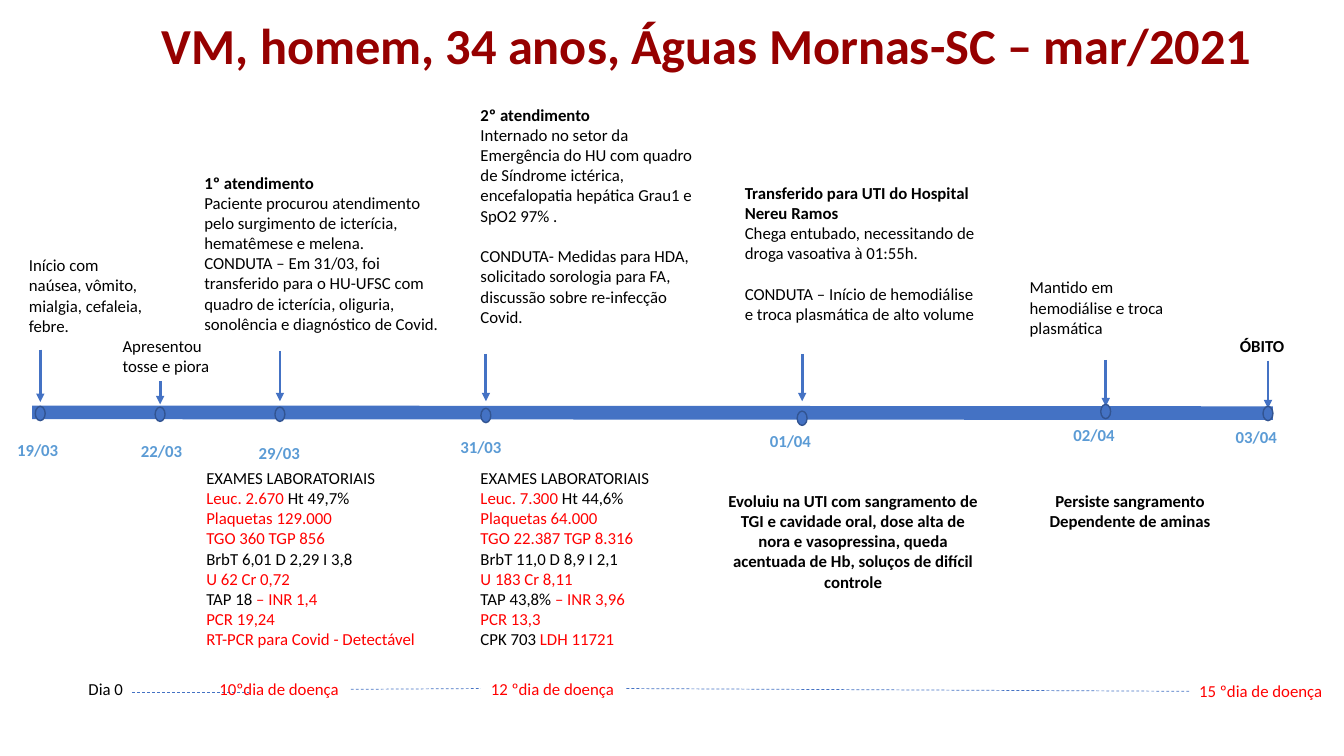
from lxml.etree import SubElement
from pptx import Presentation
from pptx.dml.color import RGBColor
from pptx.enum.dml import MSO_LINE
from pptx.enum.shapes import MSO_CONNECTOR, MSO_SHAPE
from pptx.enum.text import MSO_ANCHOR, MSO_AUTO_SIZE, PP_ALIGN
from pptx.oxml.ns import qn
from pptx.util import Cm, Pt

BLACK = RGBColor(0x00, 0x00, 0x00)
RED = RGBColor(0xFF, 0x00, 0x00)
DARK_RED = RGBColor(0x96, 0x00, 0x00)
BLUE = RGBColor(0x44, 0x72, 0xC4)
DARK_BLUE = RGBColor(0x32, 0x54, 0x91)
DATE_BLUE = RGBColor(0x5B, 0x9B, 0xD5)

DOT_WIDTH, DOT_HEIGHT = 0.25, 0.36
BLANK_LINE = Pt(14.6)

# date, label left and top, dot left and top, arrow top and bottom
EVENTS = [
    ("19/03", 0.18, 10.95, 0.89, 10.24, 8.81, 10.13),
    ("22/03", 3.30, 10.97, 3.91, 10.26, 9.60, 10.19),
    ("29/03", 6.27, 11.02, 6.93, 10.26, 8.84, 10.11),
    ("31/03", 11.35, 10.87, 12.12, 10.29, 8.92, 10.11),
    ("01/04", 19.15, 10.74, 20.09, 10.36, 8.92, 10.11),
    ("02/04", 26.80, 10.59, 27.74, 10.19, 9.07, 10.24),
    ("03/04", 30.89, 10.64, 31.83, 10.24, 9.09, 10.29),
]

# (left, top, width, height), heading, paragraphs, whether a gap precedes the last one
NOTES = [
    ((0.48, 6.30, 3.45, 2.31), None,
     ["Início com naúsea, vômito, mialgia, cefaleia, febre."], False),
    ((2.84, 8.33, 2.82, 1.27), None, ["Apresentou tosse e piora"], False),
    ((4.90, 4.22, 6.76, 4.37), "1º atendimento",
     ["Paciente procurou atendimento pelo surgimento de icterícia, hematêmese e melena.",
      "CONDUTA – Em 31/03, foi transferido para o HU-UFSC com quadro de icterícia, "
      "oliguria, sonolência e diagnóstico de Covid."], False),
    ((11.86, 2.51, 6.32, 5.89), "2º atendimento",
     ["Internado no setor da Emergência do HU com quadro de Síndrome ictérica, "
      "encefalopatia hepática Grau1 e SpO2 97% .",
      "CONDUTA- Medidas para HDA, solicitado sorologia para FA, discussão sobre "
      "re-infecção Covid."], True),
    ((18.52, 4.47, 6.53, 3.84), "Transferido para UTI do Hospital Nereu Ramos",
     ["Chega entubado, necessitando de droga vasoativa à 01:55h.",
      "CONDUTA – Início de hemodiálise e troca plasmática de alto volume"], True),
    ((25.70, 6.86, 4.09, 1.80), None,
     ["Mantido em hemodiálise e troca plasmática"], False),
]

OUTCOMES = [
    ((18.06, 12.24, 6.88, 2.82),
     ["Evoluiu na UTI com sangramento de TGI e cavidade oral, dose alta de nora e "
      "vasopressina, queda acentuada de Hb, soluços de difícil controle"]),
    ((25.04, 12.24, 6.88, 1.27), ["Persiste sangramento", "Dependente de aminas"]),
    ((30.28, 8.33, 3.05, 0.76), ["ÓBITO"]),
]

# each paragraph is a list of (text, colour) runs
EXAMS = [
    ((4.95, 11.66, 5.87, 4.88), [
        [("EXAMES LABORATORIAIS", BLACK)],
        [("Leuc. 2.670 ", RED), ("Ht 49,7%", BLACK)],
        [("Plaquetas 129.000", RED)],
        [("TGO 360 TGP 856", RED)],
        [("BrbT 6,01 D 2,29 I 3,8", BLACK)],
        [("U 62 Cr 0,72", RED)],
        [("TAP 18 ", BLACK), ("– INR 1,4", RED)],
        [("PCR 19,24", RED)],
        [("RT-PCR para Covid - Detectável", RED)],
    ]),
    ((11.86, 11.66, 4.83, 4.88), [
        [("EXAMES LABORATORIAIS", BLACK)],
        [("Leuc. 7.300 ", RED), ("Ht 44,6%", BLACK)],
        [("Plaquetas 64.000", RED)],
        [("TGO 22.387 TGP 8.316", RED)],
        [("BrbT 11,0 D 8,9 I 2,1", BLACK)],
        [("U 183 Cr 8,11", RED)],
        [("TAP 43,8% ", BLACK), ("– INR 3,96", RED)],
        [("PCR 13,3", RED)],
        [("CPK 703 ", BLACK), ("LDH 11721", RED)],
    ]),
]

ILLNESS_DAYS = [
    ((1.98, 16.99, 1.40, 0.76), "Dia 0", BLACK),
    ((5.28, 16.99, 3.56, 0.76), "10ºdia de doença", RED),
    ((12.12, 16.97, 3.66, 0.76), "12 ºdia de doença", RED),
    ((29.97, 17.02, 3.66, 0.76), "15 ºdia de doença", RED),
]
DAY_LINKS = [
    (3.33, 17.45, 6.27, 17.45),
    (8.84, 17.37, 12.12, 17.35),
    (29.97, 17.42, 15.77, 17.35),
]


def add_text(slide, place, paragraphs, wrap=True, align=PP_ALIGN.LEFT, size=12):
    """Each paragraph is a list of (text, colour, bold) runs."""
    box = slide.shapes.add_textbox(*map(Cm, place))
    frame = box.text_frame
    frame.word_wrap = wrap
    frame.auto_size = MSO_AUTO_SIZE.SHAPE_TO_FIT_TEXT
    for number, runs in enumerate(paragraphs):
        paragraph = frame.add_paragraph() if number else frame.paragraphs[0]
        paragraph.alignment = align
        for text, colour, bold in runs:
            run = paragraph.add_run()
            run.text = text
            formats = {"name": "Calibri", "size": Pt(size), "bold": bold}
            for attribute, value in formats.items():
                setattr(run.font, attribute, value)
            run.font.color.rgb = colour
    return frame


def add_line(slide, ends, width, dash=None, arrow=False):
    line = slide.shapes.add_connector(MSO_CONNECTOR.STRAIGHT, *map(Cm, ends))
    line.line.color.rgb = BLUE
    line.line.width = Pt(width)
    if dash:
        line.line.dash_style = dash
    if arrow:
        SubElement(line.line._get_or_add_ln(), qn("a:tailEnd"), type="triangle")
    SubElement(line._element.spPr, qn("a:effectLst"))


def add_title(slide, text):
    frame = add_text(slide, (2.01, 0.20, 31.62, 1.85), [[(text, DARK_RED, True)]],
                     align=PP_ALIGN.CENTER, size=36)
    frame.auto_size = MSO_AUTO_SIZE.NONE
    frame.vertical_anchor = MSO_ANCHOR.MIDDLE
    frame.paragraphs[0].line_spacing = Pt(43)


def add_event(slide, date, label_left, label_top, dot_left, dot_top, arrow_top, arrow_bottom):
    middle = dot_left + DOT_WIDTH / 2
    add_line(slide, (middle, arrow_top, middle, arrow_bottom), 2, arrow=True)
    dot = slide.shapes.add_shape(
        MSO_SHAPE.OVAL, *map(Cm, (dot_left, dot_top, DOT_WIDTH, DOT_HEIGHT)))
    dot.shadow.inherit = False
    dot.fill.solid()
    dot.fill.fore_color.rgb = BLUE
    dot.line.color.rgb = DARK_BLUE
    dot.line.width = Pt(1)
    add_text(slide, (label_left, label_top, 1.57, 0.76), [[(date, DATE_BLUE, True)]], wrap=False)


def add_note(slide, place, heading, texts, gap):
    paragraphs = [[(heading, BLACK, True)]] if heading else []
    paragraphs += [[(text, BLACK, False)] for text in texts]
    frame = add_text(slide, place, paragraphs)
    if gap:
        frame.paragraphs[-1].space_before = BLANK_LINE


def main():
    presentation = Presentation()
    presentation.slide_width, presentation.slide_height = Cm(33.87), Cm(19.05)
    slide = presentation.slides.add_slide(presentation.slide_layouts[6])

    add_title(slide, "VM, homem, 34 anos, Águas Mornas-SC – mar/2021")
    add_line(slide, (0.81, 10.39, 32.08, 10.41), 9.75)
    for event in EVENTS:
        add_event(slide, *event)
    for note in NOTES:
        add_note(slide, *note)
    for place, texts in OUTCOMES:
        add_text(slide, place, [[(text, BLACK, True)] for text in texts], align=PP_ALIGN.CENTER)
    for place, results in EXAMS:
        add_text(slide, place, [[(text, colour, False) for text, colour in result]
                                for result in results], wrap=False)
    for ends in DAY_LINKS:
        add_line(slide, ends, 0.5, dash=MSO_LINE.DASH)
    for place, day, colour in ILLNESS_DAYS:
        add_text(slide, place, [[(day, colour, False)]], wrap=False)

    presentation.save("out.pptx")


if __name__ == "__main__":
    main()
